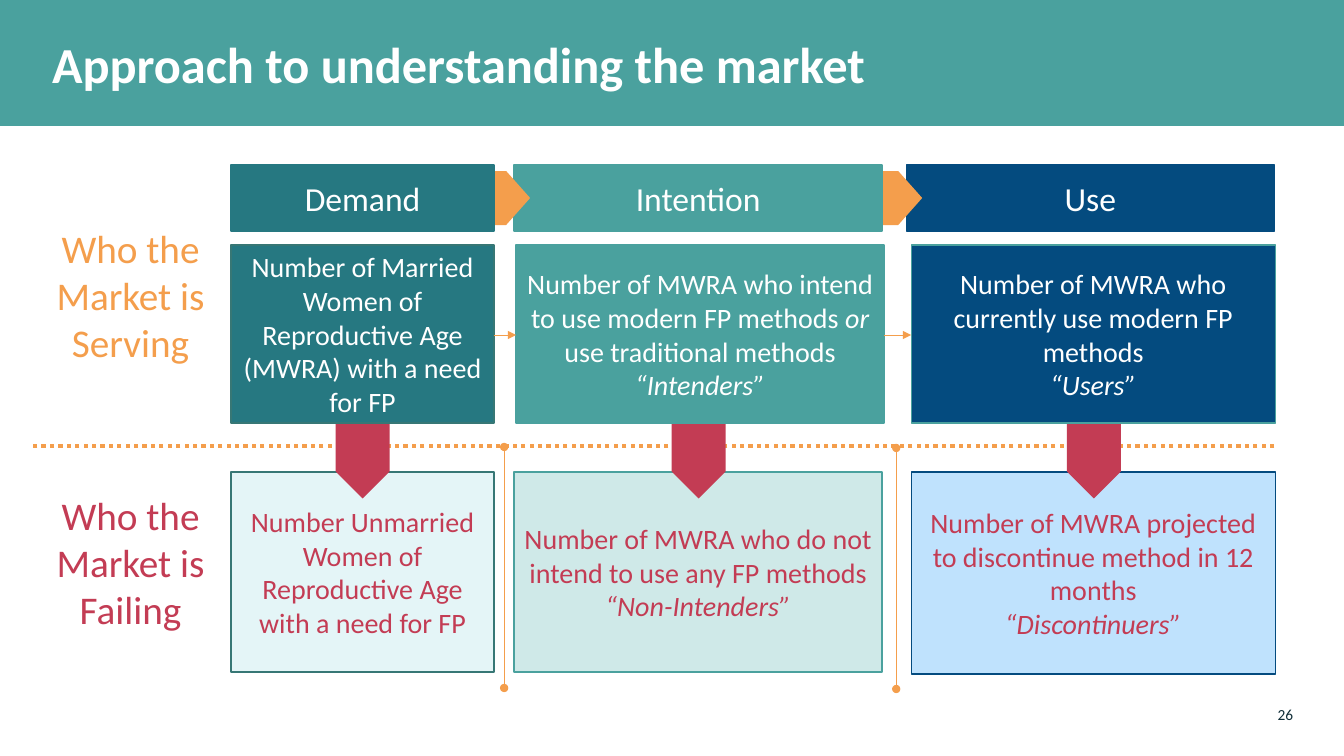
from lxml.etree import SubElement
from pptx import Presentation
from pptx.dml.color import RGBColor
from pptx.enum.dml import MSO_LINE
from pptx.enum.shapes import MSO_CONNECTOR, MSO_SHAPE
from pptx.enum.text import MSO_ANCHOR, MSO_AUTO_SIZE, PP_ALIGN
from pptx.oxml.ns import qn
from pptx.util import Inches, Pt

PX = Inches(1) / 100.8
WHITE, INK = "FFFFFF", "112E38"
TEAL, DARK_TEAL, EDGE_TEAL, NAVY = "4AA19E", "267881", "377775", "044B7F"
ORANGE, RED = "F49E4C", "C33C54"


def rgb(value):
    return RGBColor.from_string(value)


def emu(*lengths):
    return [round(length * PX) for length in lengths]


class Deck:
    font = "Calibri"

    def __init__(self):
        self.prs = Presentation()
        self.prs.slide_width, self.prs.slide_height = Inches(13.33), Inches(7.5)
        self.s = self.prs.slides.add_slide(self.prs.slide_layouts[5])

    def set_text(self, sp, text, size, color, align=PP_ALIGN.CENTER, bold=False, **frame):
        """Lines become paragraphs; text between asterisks is italic."""
        tf = sp.text_frame
        frame = {"word_wrap": True, "auto_size": MSO_AUTO_SIZE.NONE,
                 "vertical_anchor": MSO_ANCHOR.MIDDLE, **frame}
        for name, value in frame.items():
            setattr(tf, name, value)
        for i, line in enumerate(text.split("\n")):
            p = tf.add_paragraph() if i else tf.paragraphs[0]
            p.alignment = align
            for j, part in enumerate(line.split("*")):
                if not part:
                    continue
                r = p.add_run()
                r.text = part
                style = {"name": self.font, "size": Pt(size), "bold": bold, "italic": j % 2 == 1}
                for name, value in style.items():
                    setattr(r.font, name, value)
                r.font.color.rgb = rgb(color)

    def title(self, text, box):
        sp = self.s.shapes.title
        sp.left, sp.top, sp.width, sp.height = emu(*box)
        self.set_text(sp, text, 36, WHITE, PP_ALIGN.LEFT, True)
        sp.text_frame.paragraphs[0].line_spacing = 0.9
        self.s.shapes._spTree.append(sp._element)

    def label(self, text, box, size, color, **style):
        self.set_text(self.s.shapes.add_textbox(*emu(*box)), text, size, color, **style)

    def shape(self, box, fill, line=None, kind=MSO_SHAPE.RECTANGLE, rotation=0):
        sp = self.s.shapes.add_shape(kind, *emu(*box))
        sp.shadow.inherit = False
        sp.rotation = rotation
        sp.fill.solid()
        sp.fill.fore_color.rgb = rgb(fill)
        if line:
            sp.line.color.rgb = rgb(line)
            sp.line.width = Pt(1)
        else:
            sp.line.fill.background()
        return sp

    def box(self, text, box, fill, line, size=20, color=WHITE):
        self.set_text(self.shape(box, fill, line), text, size, color)

    def pentagon(self, box, fill, rotation=0):
        self.shape(box, fill, kind=MSO_SHAPE.PENTAGON, rotation=rotation)

    def line(self, start, end, width=0.5, dash=None, head=None, tail=None):
        c = self.s.shapes.add_connector(MSO_CONNECTOR.STRAIGHT, *emu(*start, *end))
        c.line.color.rgb = rgb(ORANGE)
        c.line.width = Pt(width)
        if dash:
            c.line.dash_style = dash
        spPr = c._element.spPr
        ln = spPr.find(qn("a:ln"))
        for tag, kind in (("a:headEnd", head), ("a:tailEnd", tail)):
            if kind:
                SubElement(ln, qn(tag), type=kind)
        SubElement(spPr, qn("a:effectLst"))


# Each stage: header, header x and width, body x and width, colour, edge,
# served text, missed x, missed height, missed fill, missed edge, missed text
STAGES = [
    ("Demand", 231, 263, 231, 263, DARK_TEAL, EDGE_TEAL,
     "Number of Married Women of Reproductive Age (MWRA) with a need for FP",
     231, 200, "E4F5F7", EDGE_TEAL,
     "Number Unmarried Women of Reproductive Age with a need for FP"),
    ("Intention", 514, 368, 516, 368, TEAL, TEAL,
     "Number of MWRA who intend to use modern FP methods *or* use traditional methods\n*“Intenders”*",
     514, 200, "CFE9E8", TEAL,
     "Number of MWRA who do not intend to use any FP methods\n*“Non-Intenders”*"),
    ("Use", 906, 368, 911, 364, NAVY, TEAL,
     "Number of MWRA who currently use modern FP methods\n*“Users”*",
     911, 202, "BFE2FD", NAVY,
     "Number of MWRA projected to discontinue method in 12 months\n*“Discontinuers”*"),
]


def main():
    deck = Deck()

    # Title band and page number
    deck.shape((0, 0, 1344, 126), TEAL)
    deck.title("Approach to understanding the market", (42, 8, 1243, 118))
    deck.label("26", (1244, 705, 49, 20), 11, INK, align=PP_ALIGN.RIGHT,
               vertical_anchor=MSO_ANCHOR.TOP, margin_left=0, margin_right=0,
               margin_top=0, margin_bottom=0)

    # Headers from right to left, each with the arrow that enters it
    for name, x, w, _, _, fill, *_ in reversed(STAGES):
        deck.box(name, (x, 165, w, 66), fill, fill, size=24)
        if name != "Demand":
            deck.pentagon((x - 32, 171, 48, 54), ORANGE)

    # Divider between served and failed groups
    deck.line((1274, 446), (31, 446), width=3, dash=MSO_LINE.ROUND_DOT)

    # Served box, missed box and the red arrow joining them
    for _, _, _, x, w, fill, edge, served, miss_x, miss_h, miss_fill, miss_edge, missed in STAGES:
        deck.box(missed, (miss_x, 472, w, miss_h), miss_fill, miss_edge, color=RED)
        deck.pentagon((miss_x + w // 2 - 37, 434, 75, 54), RED, rotation=90)
        deck.box(served, (x, 245, w, 178), fill, edge)

    # Row labels
    deck.label("Who the Market is Serving", (30, 165, 201, 259), 28, ORANGE)
    deck.label("Who the Market is Failing", (30, 452, 201, 220), 28, RED)

    # Thin arrows between stages and vertical separators
    for start, end in ((494, 516), (884, 911)):
        deck.line((start, 335), (end, 335), tail="triangle")
    for x, top in ((504, 447), (896, 448)):
        deck.line((x, top), (x, top + 241), head="oval", tail="oval")

    deck.prs.save("out.pptx")


if __name__ == "__main__":
    main()
